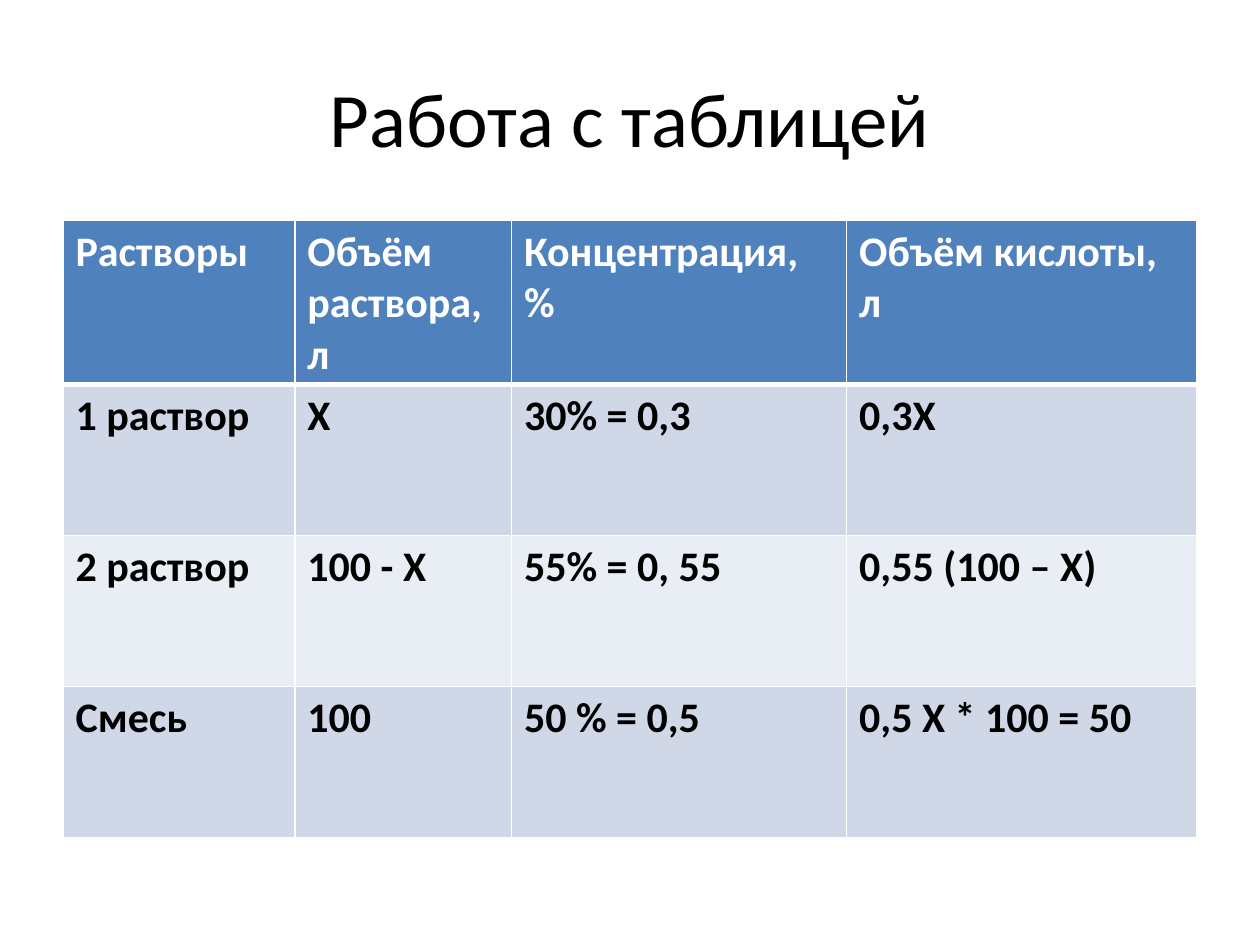
import pptx
import pptx.util
import pptx.dml.color
import pptx.enum.text
import pptx.oxml.ns
import lxml.etree

Inches = pptx.util.Inches
Pt = pptx.util.Pt
RGBColor = pptx.dml.color.RGBColor

BLACK = RGBColor(0x00, 0x00, 0x00)
WHITE = RGBColor(0xFF, 0xFF, 0xFF)
BLUE = RGBColor(0x4F, 0x81, 0xBD)
BANDS = [RGBColor(0xE9, 0xED, 0xF4), RGBColor(0xD0, 0xD8, 0xE8)]
FONT = "Calibri"

COLS = [1.84, 1.72, 2.66, 2.78]
ROWS = [
    ["Растворы", "Объём раствора, л", "Концентрация, %", "Объём кислоты, л"],
    ["1 раствор", "Х", "30% = 0,3", "0,3Х"],
    ["2 раствор", "100 - Х", "55% = 0, 55", "0,55 (100 – Х)"],
    ["Смесь", "100", "50 % = 0,5", "0,5 Х * 100 = 50"],
]


def style(frame, size, color, bold=False):
    for para in frame.paragraphs:
        for run in para.runs:
            run.font.name = FONT
            run.font.size = Pt(size)
            run.font.bold = bold
            run.font.color.rgb = color


def add_title(slide, box, text):
    frame = slide.shapes.add_textbox(*box).text_frame
    frame.word_wrap = True
    frame.vertical_anchor = pptx.enum.text.MSO_ANCHOR.MIDDLE
    frame.text = text
    frame.paragraphs[0].alignment = pptx.enum.text.PP_ALIGN.CENTER
    style(frame, 44, BLACK)


def set_edges(cell, top, bottom):
    qn = pptx.oxml.ns.qn
    props = cell._tc.get_or_add_tcPr()
    for side, width in (("L", 1), ("R", 1), ("T", top), ("B", bottom)):
        line = lxml.etree.SubElement(props, qn(f"a:ln{side}"), w=str(Pt(width)))
        fill = lxml.etree.SubElement(line, qn("a:solidFill"))
        lxml.etree.SubElement(fill, qn("a:srgbClr"), val=str(WHITE))


def add_grid(slide, box, rows, widths):
    table = slide.shapes.add_table(len(rows), len(widths), *box).table
    for col, width in zip(table.columns, widths):
        col.width = Inches(width)
    for r, row in enumerate(rows):
        head = r == 0
        for c, text in enumerate(row):
            cell = table.cell(r, c)
            cell.text_frame.text = text
            style(cell.text_frame, 24, WHITE if head else BLACK, True)
            set_edges(cell, 3 if r == 1 else 1, 3 if head else 1)
            cell.fill.solid()
            cell.fill.fore_color.rgb = BLUE if head else BANDS[r % 2]


def main():
    deck = pptx.Presentation()
    deck.slide_width = Inches(10)
    deck.slide_height = Inches(7.5)
    slide = deck.slides.add_slide(deck.slide_layouts[6])
    left, width = Inches(0.5), Inches(9)
    add_title(slide, (left, Inches(0.3), width, Inches(1.25)), "Работа с таблицей")
    add_grid(slide, (left, Inches(1.75), width, Inches(4.8)), ROWS, COLS)
    deck.save("out.pptx")


if __name__ == "__main__":
    main()
